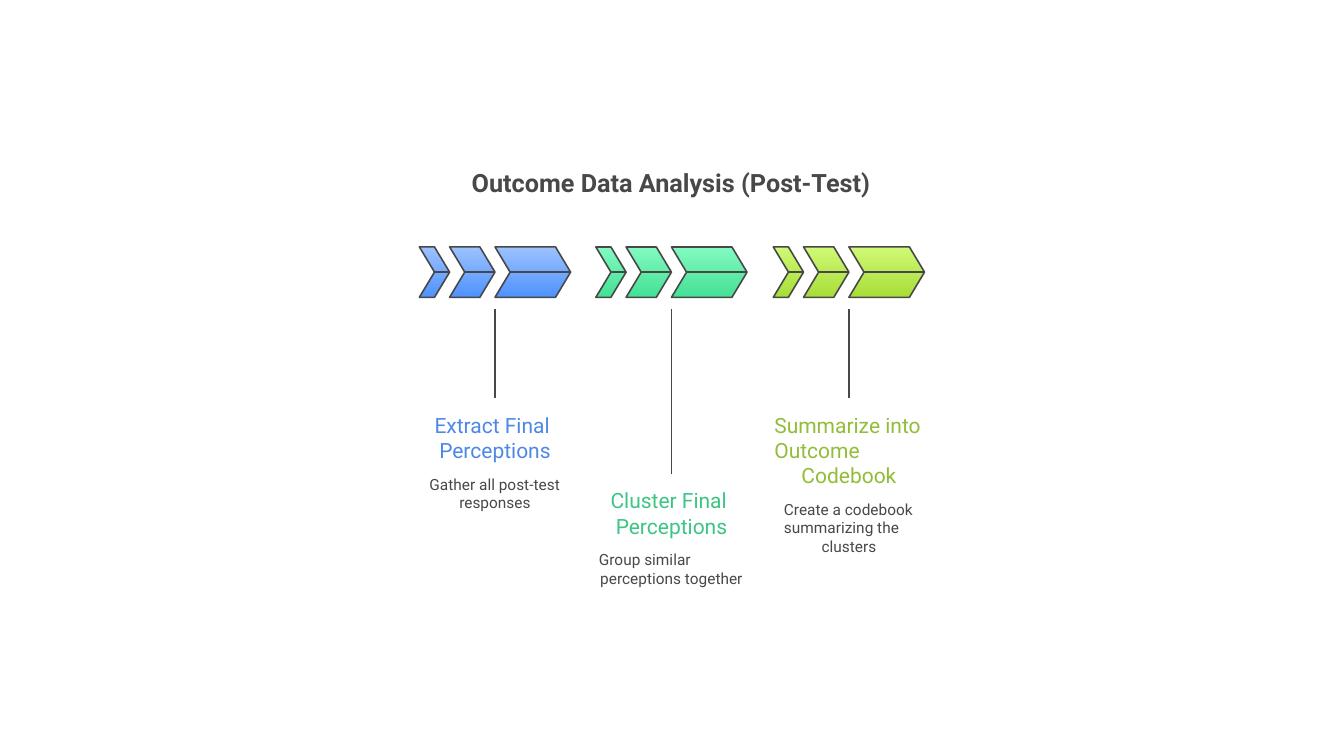
import pptx
import pptx.dml.color
import pptx.enum.text
import pptx.util

Inches = pptx.util.Inches
Pt = pptx.util.Pt

INK = "484848"
FONT = "Roboto"
STEP_W = 1.5
CHEVRON_H = 0.5
NOTCH = 0.15
CHEVRONS = [(0.75, 0.75), (0.3, 0.45), (0, 0.3)]
STEPS = [
    (4.16, ("9CC2FF", "4F92FF"), "4E88E7", 0.88,
     "Extract Final\nPerceptions", 1.2,
     "Gather all post-test\nresponses", 1.3),
    (5.91, ("83FAC1", "44E095"), "3CC583", 1.63,
     "Cluster Final\nPerceptions", 1.21,
     "Group similar\nperceptions together", 1.44),
    (7.67, ("CFF976", "A8DD38"), "92BD39", 0.88,
     "Summarize into\nOutcome\nCodebook", 1.48,
     "Create a codebook\nsummarizing the\nclusters", 1.29),
]


def rgb(value):
    return pptx.dml.color.RGBColor.from_string(value)


def write_text(sp, text, size, color, bold=False):
    tf = sp.text_frame
    tf.margin_left = tf.margin_right = tf.margin_top = tf.margin_bottom = 0
    tf.word_wrap = False
    tf.auto_size = pptx.enum.text.MSO_AUTO_SIZE.SHAPE_TO_FIT_TEXT
    tf.vertical_anchor = pptx.enum.text.MSO_ANCHOR.TOP
    p = tf.paragraphs[0]
    p.alignment = pptx.enum.text.PP_ALIGN.CENTER
    r = p.add_run()
    r.text = text
    r.font.name = FONT
    r.font.size = Pt(size)
    r.font.bold = bold
    r.font.color.rgb = rgb(color)


def add_title(s, x, y, w, h):
    sp = s.shapes.title
    sp.left, sp.top, sp.width, sp.height = map(Inches, (x, y, w, h))
    write_text(sp, "Outcome Data Analysis (Post-Test)", 18, INK, True)


def add_label(s, center, y, w, h, text, size, color):
    sp = s.shapes.add_textbox(Inches(center - w / 2), Inches(y), Inches(w), Inches(h))
    write_text(sp, text, size, color)


def add_outlines(s, outlines, closed_count):
    builder = None
    for i, outline in enumerate(outlines):
        points = [(Inches(px), Inches(py)) for px, py in outline]
        if builder is None:
            builder = s.shapes.build_freeform(*points[0])
        else:
            builder.move_to(*points[0])
        builder.add_line_segments(points[1:], close=i < closed_count)
    sp = builder.convert_to_shape()
    sp.shadow.inherit = False
    return sp


def add_arrow(s, x, y, gradient, stem_top, stem_bottom):
    mid, bottom = y + CHEVRON_H / 2, y + CHEVRON_H
    center = x + STEP_W / 2
    chevrons, lines = [], []
    for offset, w in CHEVRONS:
        left, right = x + offset, x + offset + w
        chevrons.append([(left, y), (right - NOTCH, y), (right, mid),
                         (right - NOTCH, bottom), (left, bottom), (left + NOTCH, mid)])
        lines.append([(left + NOTCH, mid), (right, mid)])
    lines.append([(center, stem_top), (center, stem_bottom)])

    body = add_outlines(s, chevrons, len(chevrons))
    body.fill.gradient()
    body.fill.gradient_angle = 270
    for stop, color in zip(body.fill.gradient_stops, gradient):
        stop.color.rgb = rgb(color)
    body.line.fill.background()

    edges = add_outlines(s, chevrons + lines, len(chevrons))
    edges.fill.background()
    edges.line.color.rgb = rgb(INK)
    edges.line.width = Pt(1.12)


def add_step(s, x, y, gradient, color, stem, heading, heading_w, detail, detail_w):
    center = x + STEP_W / 2
    stem_top = y + CHEVRON_H + 0.12
    stem_bottom = stem_top + stem
    add_arrow(s, x, y, gradient, stem_top, stem_bottom)
    heading_top = stem_bottom + 0.14
    heading_h = 0.25 * len(heading.splitlines())
    add_label(s, center, heading_top, heading_w, heading_h, heading, 15, color)
    detail_top = heading_top + heading_h + 0.12
    detail_h = 0.19 * len(detail.splitlines())
    add_label(s, center, detail_top, detail_w, detail_h, detail, 11, INK)


def main():
    prs = pptx.Presentation()
    prs.slide_width, prs.slide_height = Inches(13.33), Inches(7.5)
    s = prs.slides.add_slide(prs.slide_layouts[5])
    add_title(s, 4.65, 1.66, 4.01, 0.3)
    for x, *step in STEPS:
        add_step(s, x, 2.45, *step)
    prs.save("out.pptx")


if __name__ == "__main__":
    main()
